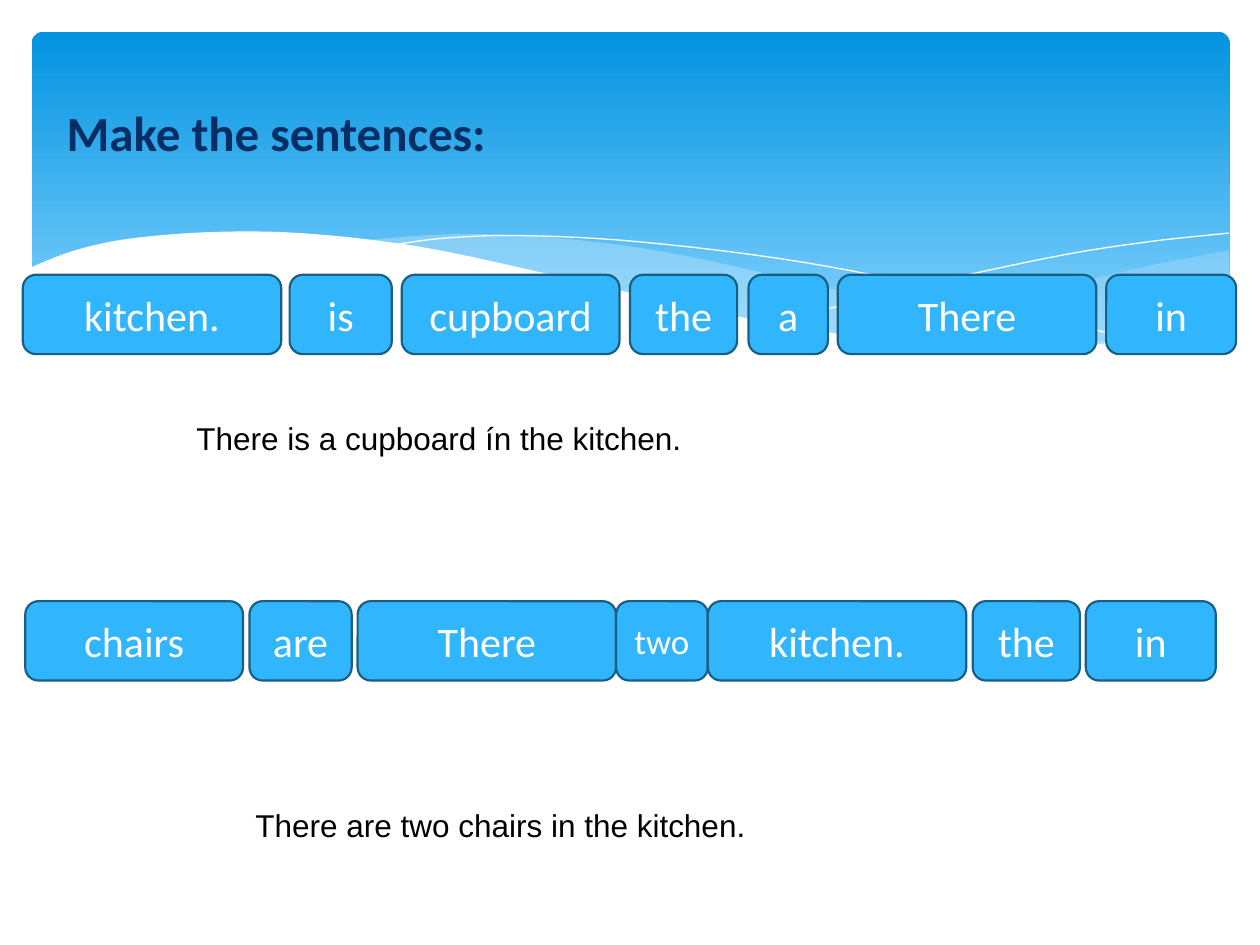
import pptx
import pptx.dml.color
import pptx.enum.shapes
import pptx.enum.text
import pptx.oxml.ns
import pptx.util
from lxml import etree

Cm = pptx.util.Cm
Pt = pptx.util.Pt
RGBColor = pptx.dml.color.RGBColor
ROUNDED = pptx.enum.shapes.MSO_SHAPE.ROUNDED_RECTANGLE
ANCHOR = pptx.enum.text.MSO_ANCHOR
ALIGN = pptx.enum.text.PP_ALIGN
AUTO_SIZE = pptx.enum.text.MSO_AUTO_SIZE

WHITE = RGBColor(0xFF, 0xFF, 0xFF)
BLACK = RGBColor(0x00, 0x00, 0x00)
NAVY = RGBColor(0x05, 0x2E, 0x65)
BANNER_TOP = RGBColor(0x02, 0x93, 0xE0)
BANNER_BOTTOM = RGBColor(0x83, 0xD3, 0xFE)
VEIL = RGBColor(0xC6, 0xE7, 0xFC)
TILE_FILL = RGBColor(0x31, 0xB6, 0xFD)
TILE_LINE = RGBColor(0x19, 0x5F, 0x84)

# Wave edges in centimetres from the banner's top left corner
RIGHT_VEIL = [
    [(24.13, 4.41), (22.75, 4.67), (21.23, 5.02), (18.49, 5.66), (16.15, 6.09)],
    [(16.15, 6.09), (17.6, 6.24), (19.76, 6.42), (21.51, 6.32), (22.93, 6.04),
     (24.15, 5.63)],
]
LEFT_VEIL = [
    [(6.62, 4.21), (8.53, 4.08), (10.59, 4.16), (12.77, 4.44), (15.34, 5),
     (18.18, 5.66), (20.62, 6.09), (22.04, 6.29)],
    [(22.04, 6.29), (20.65, 6.42), (18.99, 6.4), (17.01, 6.22), (14.63, 5.84),
     (11.83, 5.25), (9.09, 4.62), (6.62, 4.21)],
]
LEFT_STROKE = [(7.21, 4.31), (8.33, 4.16), (9.93, 4.11), (12.31, 4.24),
               (15.51, 4.64), (18.66, 5.28), (22.4, 6.27)]
RIGHT_STROKE = [(14.93, 5.89), (17.65, 5.18), (20.59, 4.54), (22.47, 4.24),
                (24.13, 4.06)]
WHITE_WAVE = [
    [(24.18, 5.61), (22.73, 6.09), (20.95, 6.35), (19.12, 6.37), (16.84, 6.17),
     (14.07, 5.71), (10.71, 4.95), (7.97, 4.36), (5.71, 4.08), (3.86, 4.03),
     (2.05, 4.16), (0.86, 4.41), (-0.06, 4.77)],
    [(-0.06, 7.72), (24.18, 7.72)],
]

# Tile widths in centimetres, and each row's words with their left offsets
TILE_WIDTHS = {"kitchen.": 5.21, "There": 5.21, "cupboard": 4.39, "chairs": 4.39,
               "in": 2.62, "the": 2.16, "is": 2.06, "are": 2.06, "two": 1.85,
               "a": 1.6}
FIRST_ROW = [("kitchen.", 0), ("is", 5.38), ("cupboard", 7.64), ("the", 12.24),
             ("a", 14.63), ("There", 16.43), ("in", 21.84)]
SECOND_ROW = [("chairs", 0), ("are", 4.52), ("There", 6.7), ("two", 11.91),
              ("kitchen.", 13.76), ("the", 19.1), ("in", 21.38)]


def smooth_edge(points, steps=6):
    """Return points along a Catmull-Rom curve through the given ones."""
    if len(points) < 3:
        return points
    padded = [points[0], *points, points[-1]]
    curve = [points[0]]
    for before, start, end, after in zip(padded, padded[1:], padded[2:], padded[3:]):
        for step in range(1, steps + 1):
            t = step / steps
            curve.append(tuple(
                0.5 * (2 * b + (c - a) * t + (2 * a - 5 * b + 4 * c - d) * t ** 2
                       + (3 * b - a - 3 * c + d) * t ** 3)
                for a, b, c, d in zip(before, start, end, after)))
    return curve


def add_wave(slide, left, top, edges, closed=True):
    points = [(Cm(left + x), Cm(top + y))
              for edge in edges for x, y in smooth_edge(edge)]
    builder = slide.shapes.build_freeform(*points[0])
    builder.add_line_segments(points[1:], close=closed)
    shape = builder.convert_to_shape()
    shape.shadow.inherit = False
    return shape


def fill_wave(shape, color, opacity=100):
    shape.fill.solid()
    shape.fill.fore_color.rgb = color
    shape.line.fill.background()
    if opacity < 100:
        color_element = shape.element.spPr.find(".//" + pptx.oxml.ns.qn("a:srgbClr"))
        alpha = etree.SubElement(color_element, pptx.oxml.ns.qn("a:alpha"))
        alpha.set("val", str(opacity * 1000))


def add_banner(slide, left, top, width, height):
    # Gradient panel
    panel = slide.shapes.add_shape(ROUNDED, Cm(left), Cm(top), Cm(width), Cm(height))
    panel.adjustments[0] = 0.034
    panel.shadow.inherit = False
    panel.line.fill.background()
    panel.fill.gradient()
    panel.fill.gradient_angle = 270
    stops = [(0, BANNER_TOP), (0.9, BANNER_BOTTOM)]
    for stop, (position, color) in zip(panel.fill.gradient_stops, stops):
        stop.position = position
        stop.color.rgb = color

    # Translucent veils, thin strokes and the white wave in front
    fill_wave(add_wave(slide, left, top, RIGHT_VEIL), VEIL, 29)
    fill_wave(add_wave(slide, left, top, LEFT_VEIL), VEIL, 40)
    for stroke in (LEFT_STROKE, RIGHT_STROKE):
        shape = add_wave(slide, left, top, [stroke], closed=False)
        shape.fill.background()
        shape.line.color.rgb = WHITE
        shape.line.width = Pt(0)
    fill_wave(add_wave(slide, left, top, WHITE_WAVE), WHITE)


def add_run(paragraph, text, size, font_name, color, bold=False):
    run = paragraph.add_run()
    run.text = text
    run.font.size = Pt(size)
    run.font.name = font_name
    run.font.color.rgb = color
    run.font.bold = bold


def add_word_row(slide, left, top, height, words):
    for word, offset in words:
        tile = slide.shapes.add_shape(ROUNDED, Cm(left + offset), Cm(top),
                                      Cm(TILE_WIDTHS[word]), Cm(height))
        tile.shadow.inherit = False
        tile.fill.solid()
        tile.fill.fore_color.rgb = TILE_FILL
        tile.line.color.rgb = TILE_LINE
        tile.line.width = Pt(1.25)
        tile.text_frame.vertical_anchor = ANCHOR.MIDDLE
        paragraph = tile.text_frame.paragraphs[0]
        paragraph.alignment = ALIGN.CENTER
        add_run(paragraph, word, 20 if word == "two" else 24, "Calibri", WHITE)


def place_heading(slide, left, top, width, height, text):
    title = slide.shapes.title
    title.left, title.top, title.width, title.height = map(
        Cm, (left, top, width, height))
    title.text_frame.word_wrap = False
    title.text_frame.auto_size = AUTO_SIZE.SHAPE_TO_FIT_TEXT
    title.text_frame.vertical_anchor = ANCHOR.TOP
    paragraph = title.text_frame.paragraphs[0]
    paragraph.alignment = ALIGN.LEFT
    add_run(paragraph, text, 28, "Calibri", NAVY, bold=True)
    # Bring the heading in front of the banner
    title.element.getparent().append(title.element)


def add_answer(slide, left, top, width, height, text):
    box = slide.shapes.add_textbox(Cm(left), Cm(top), Cm(width), Cm(height))
    box.text_frame.word_wrap = True
    box.text_frame.auto_size = AUTO_SIZE.SHAPE_TO_FIT_TEXT
    add_run(box.text_frame.paragraphs[0], text, 18, "Arial", BLACK)


def main():
    presentation = pptx.Presentation()
    presentation.slide_width = Cm(25.4)
    presentation.slide_height = Cm(19.05)
    slide = presentation.slides.add_slide(
        presentation.slide_layouts.get_by_name("Title Only"))

    add_banner(slide, 0.64, 0.64, 24.15, 6.86)
    add_word_row(slide, 0.46, 5.54, 1.6, FIRST_ROW)
    add_word_row(slide, 0.51, 12.12, 1.6, SECOND_ROW)
    place_heading(slide, 1.09, 1.93, 9.19, 1.45, "Make the sentences:")
    add_answer(slide, 3.71, 8.33, 19, 1.02, "There is a cupboard ín the kitchen.")
    add_answer(slide, 4.9, 16.13, 15.6, 1.02, "There are two chairs in the kitchen.")

    presentation.save("out.pptx")


if __name__ == "__main__":
    main()
